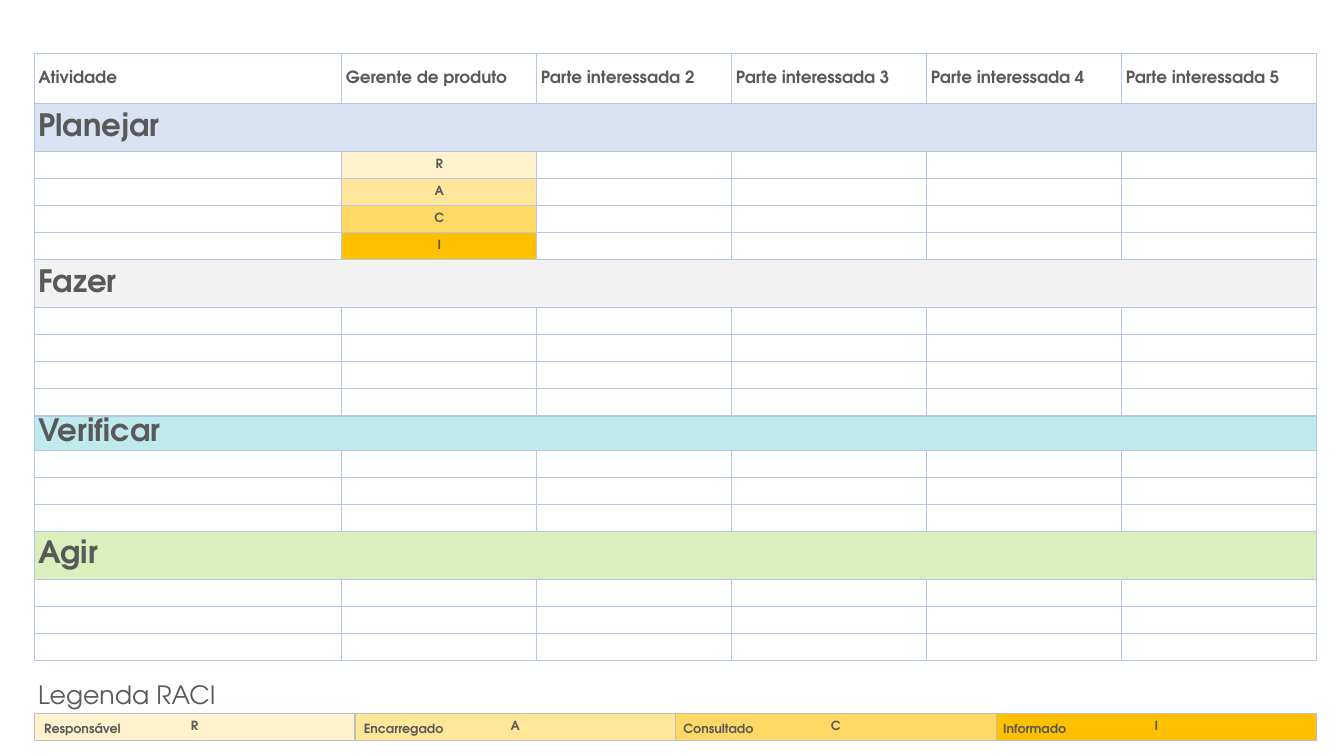
from dataclasses import dataclass

from lxml import etree
from pptx import Presentation
from pptx import util as u
from pptx.dml.color import RGBColor
from pptx.enum import text
from pptx.oxml.ns import qn


@dataclass(frozen=True)
class Theme:
    font: str = "TeX Gyre Adventor"
    ink: str = "595959"
    blank: str = "FFFFFF"
    grid: str = "B4C7E7"
    legend_grid: str = "BFBFBF"
    border_pt: float = 1
    small: int = 9
    header: int = 12
    title: int = 18
    phase: int = 22


THEME = Theme()
HEADERS = ["Atividade", "Gerente de produto"] + [f"Parte interessada {n}" for n in range(2, 6)]
RACI = [  # letter, meaning, colour
    ("R", "Responsável", "FFF2CC"),
    ("A", "Encarregado", "FFE699"),
    ("C", "Consultado", "FFD966"),
    ("I", "Informado", "FFC000"),
]
PHASES = [  # name, colour, title height, number of activities
    ("Planejar", "DAE3F3", 0.47, 4),
    ("Fazer", "F2F2F2", 0.47, 4),
    ("Verificar", "BFEAED", 0.34, 3),
    ("Agir", "DAEFBB", 0.47, 3),
]
HEADER_HEIGHT = 0.5
ROW_HEIGHT = 0.27
ACTIVITY_WIDTH = 3.05


def write(frame, words, size=THEME.small, bold=True, align=text.PP_ALIGN.LEFT):
    paragraph = frame.paragraphs[0]
    paragraph.alignment = align
    run = paragraph.add_run()
    run.text = words
    run.font.name = THEME.font
    run.font.size = u.Pt(size)
    run.font.bold = bold
    run.font.color.rgb = RGBColor.from_string(THEME.ink)


def draw_borders(cell, color):
    properties = cell._tc.get_or_add_tcPr()
    for position, side in enumerate(("lnL", "lnR", "lnT", "lnB")):
        line = etree.Element(qn(f"a:{side}"), w=str(u.Pt(THEME.border_pt)))
        fill = etree.SubElement(line, qn("a:solidFill"))
        etree.SubElement(fill, qn("a:srgbClr"), val=color)
        properties.insert(position, line)


def fill_cell(cell, words="", color=None, inset=0.04, **style):
    """Fill a cell; without words it keeps a small type size, so its row stays low."""
    cell.vertical_anchor = text.MSO_ANCHOR.MIDDLE
    cell.margin_left = cell.margin_right = u.Inches(0.04)
    cell.margin_top = cell.margin_bottom = u.Inches(inset)
    if color:
        cell.fill.solid()
        cell.fill.fore_color.rgb = RGBColor.from_string(color)
    else:
        cell.fill.background()
    if words:
        write(cell.text_frame, words, **style)
    else:
        end = cell.text_frame.paragraphs[0]._p.get_or_add_endParaRPr()
        end.set("sz", str(THEME.small * 100))


def add_grid(slide, left, top, widths, heights, border):
    grid = slide.shapes.add_table(
        len(heights), len(widths), u.Inches(left), u.Inches(top),
        u.Inches(sum(widths)), u.Inches(sum(heights))).table
    grid.first_row = grid.horz_banding = False
    for column, width in zip(grid.columns, widths):
        column.width = u.Inches(width)
    for row, height in zip(grid.rows, heights):
        row.height = u.Inches(height)
    for cell in grid.iter_cells():
        draw_borders(cell, border)
    return grid


def add_label(slide, words, left, top, width, height, **style):
    label = slide.shapes.add_textbox(
        u.Inches(left), u.Inches(top), u.Inches(width), u.Inches(height))
    label.text_frame.word_wrap = True
    label.text_frame.auto_size = text.MSO_AUTO_SIZE.SHAPE_TO_FIT_TEXT
    write(label.text_frame, words, **style)


def add_matrix(slide, left, top, width):
    """Activities by phase against the people who take part."""
    people = len(HEADERS) - 1
    widths = [ACTIVITY_WIDTH] + [(width - ACTIVITY_WIDTH) / people] * people
    heights = [HEADER_HEIGHT]
    for _, _, title_height, activities in PHASES:
        heights += [title_height] + [ROW_HEIGHT] * activities
    matrix = add_grid(slide, left, top, widths, heights, THEME.grid)

    for column, header in enumerate(HEADERS):
        fill_cell(matrix.cell(0, column), header, size=THEME.header)

    row = 1
    for phase, color, _, activities in PHASES:
        title = matrix.cell(row, 0)
        title.merge(matrix.cell(row, people))
        fill_cell(title, phase, color, inset=0, size=THEME.phase)
        for activity in range(row + 1, row + 1 + activities):
            fill_cell(matrix.cell(activity, 0))
            for column in range(1, people + 1):
                # The first phase shows one sample of each role for the product manager.
                if row == 1 and column == 1:
                    letter, _, shade = RACI[activity - 2]
                    fill_cell(matrix.cell(activity, column), letter, shade,
                              align=text.PP_ALIGN.CENTER)
                else:
                    fill_cell(matrix.cell(activity, column), color=THEME.blank)
        row += 1 + activities


def add_legend(slide, left, top, width):
    add_label(slide, "Legenda RACI", left - 0.06, top, 5.14, 0.4,
              size=THEME.title, bold=False)
    bar_top = top + 0.39
    step = width / len(RACI)
    bar = add_grid(slide, left, bar_top, [step] * len(RACI), [ROW_HEIGHT], THEME.legend_grid)
    for column, (letter, meaning, shade) in enumerate(RACI):
        fill_cell(bar.cell(0, column), letter, shade, align=text.PP_ALIGN.CENTER)
        add_label(slide, meaning, left + column * 3.17, bar_top + 0.02, 3.16, 0.25)


def main():
    deck = Presentation()
    deck.slide_width, deck.slide_height = u.Inches(13.33), u.Inches(7.5)
    slide = deck.slides.add_slide(deck.slide_layouts[6])
    add_matrix(slide, left=0.34, top=0.53, width=12.72)
    add_legend(slide, left=0.34, top=6.69, width=12.72)
    deck.save("out.pptx")


if __name__ == "__main__":
    main()
